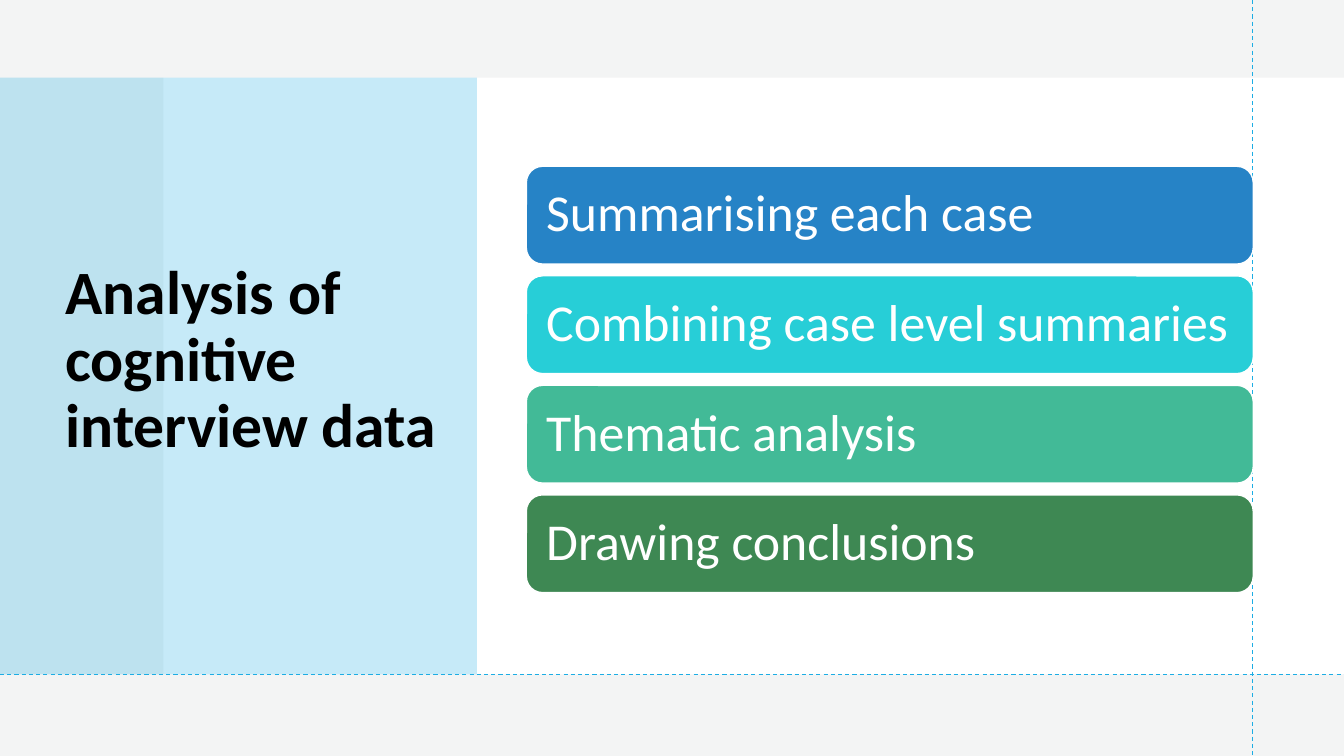
import pptx
import pptx.util
import pptx.dml.color
import pptx.enum.dml
import pptx.enum.shapes
import pptx.enum.text
import pptx.oxml.ns
from lxml import etree
from dataclasses import dataclass

Inches = pptx.util.Inches
SHAPE = pptx.enum.shapes.MSO_SHAPE


@dataclass(frozen=True)
class Theme:
    font: str = "Calibri"
    title_size: int = 44
    step_size: int = 37
    backdrop: str = "F3F4F4"
    white: str = "FFFFFF"
    black: str = "000000"
    accent: str = "1CADE4"
    steps: tuple = ("2683C6", "27CED7", "42BA97", "3E8853")


THEME = Theme()


def rgb(color):
    return pptx.dml.color.RGBColor.from_string(color)


def add_block(s, kind, box, color, line=None):
    sp = s.shapes.add_shape(kind, *map(Inches, box))
    sp.shadow.inherit = False
    sp.fill.solid()
    sp.fill.fore_color.rgb = rgb(color)
    if line:
        sp.line.color.rgb = rgb(line)
        sp.line.width = pptx.util.Pt(1)
    else:
        sp.line.fill.background()
    return sp


def write(sp, text, size, color, bold=False):
    tf = sp.text_frame
    tf.word_wrap = True
    tf.vertical_anchor = pptx.enum.text.MSO_ANCHOR.MIDDLE
    p = tf.paragraphs[0]
    p.alignment = pptx.enum.text.PP_ALIGN.LEFT
    p.line_spacing = 0.9
    r = p.add_run()
    r.text = text
    r.font.name = THEME.font
    r.font.size = pptx.util.Pt(size)
    r.font.bold = bold
    r.font.color.rgb = rgb(color)


def add_title_panel(s, box, text):
    x, y, w, h = box
    panel = add_block(s, SHAPE.RECTANGLE, box, THEME.accent)
    qn = pptx.oxml.ns.qn
    color = panel._element.spPr.find(qn("a:solidFill")).find(qn("a:srgbClr"))
    etree.SubElement(color, qn("a:alpha"), val="25000")
    title_box = (x + 0.55, y - 0.03, w - 0.78, h - 0.23)
    title = s.shapes.add_textbox(*map(Inches, title_box))
    write(title, text, THEME.title_size, THEME.black, bold=True)


def add_guide(s, start, end):
    line = s.shapes.add_connector(
        pptx.enum.shapes.MSO_CONNECTOR.STRAIGHT, *map(Inches, start + end))
    line.line.color.rgb = rgb(THEME.accent)
    line.line.width = pptx.util.Pt(0.75)
    line.line.dash_style = pptx.enum.dml.MSO_LINE.DASH
    etree.SubElement(line._element.spPr, pptx.oxml.ns.qn("a:effectLst"))


def add_steps(s, box, texts):
    x, y, w, h = box
    bar_h = 0.97
    pitch = (h - bar_h) / (len(texts) - 1)
    for i, (text, color) in enumerate(zip(texts, THEME.steps)):
        bar = add_block(s, SHAPE.ROUNDED_RECTANGLE,
                        (x, y + i * pitch, w, bar_h), color, THEME.white)
        tf = bar.text_frame
        tf.margin_left = tf.margin_right = Inches(0.15)
        write(bar, text, THEME.step_size, THEME.white)


def main():
    prs = pptx.Presentation()
    width, height = 13.33, 7.5
    prs.slide_width, prs.slide_height = Inches(width), Inches(height)
    s = prs.slides.add_slide(prs.slide_layouts[6])
    s.background.fill.solid()
    s.background.fill.fore_color.rgb = rgb(THEME.backdrop)

    add_block(s, SHAPE.RECTANGLE, (1.62, 0.77, width - 1.62, 5.92), THEME.white)
    add_title_panel(s, (0, 0.77, 4.73, 5.92), "Analysis of cognitive interview data")
    add_guide(s, (12.42, 0), (12.42, height))
    add_guide(s, (0, 6.69), (width, 6.69))
    add_steps(s, (5.22, 1.65, 7.21, 4.23), [
        "Summarising each case",
        "Combining case level summaries",
        "Thematic analysis",
        "Drawing conclusions",
    ])
    prs.save("out.pptx")


if __name__ == "__main__":
    main()
